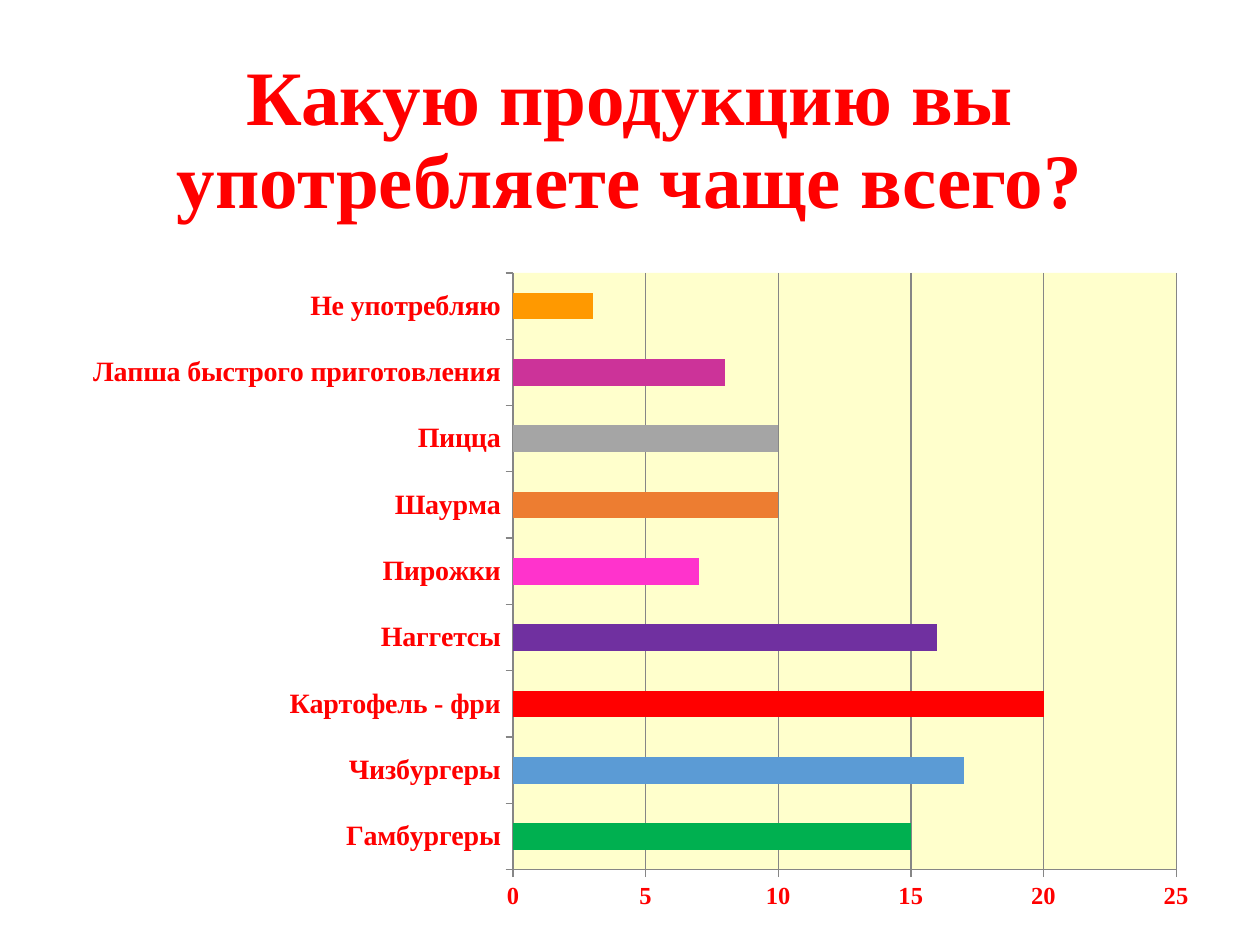
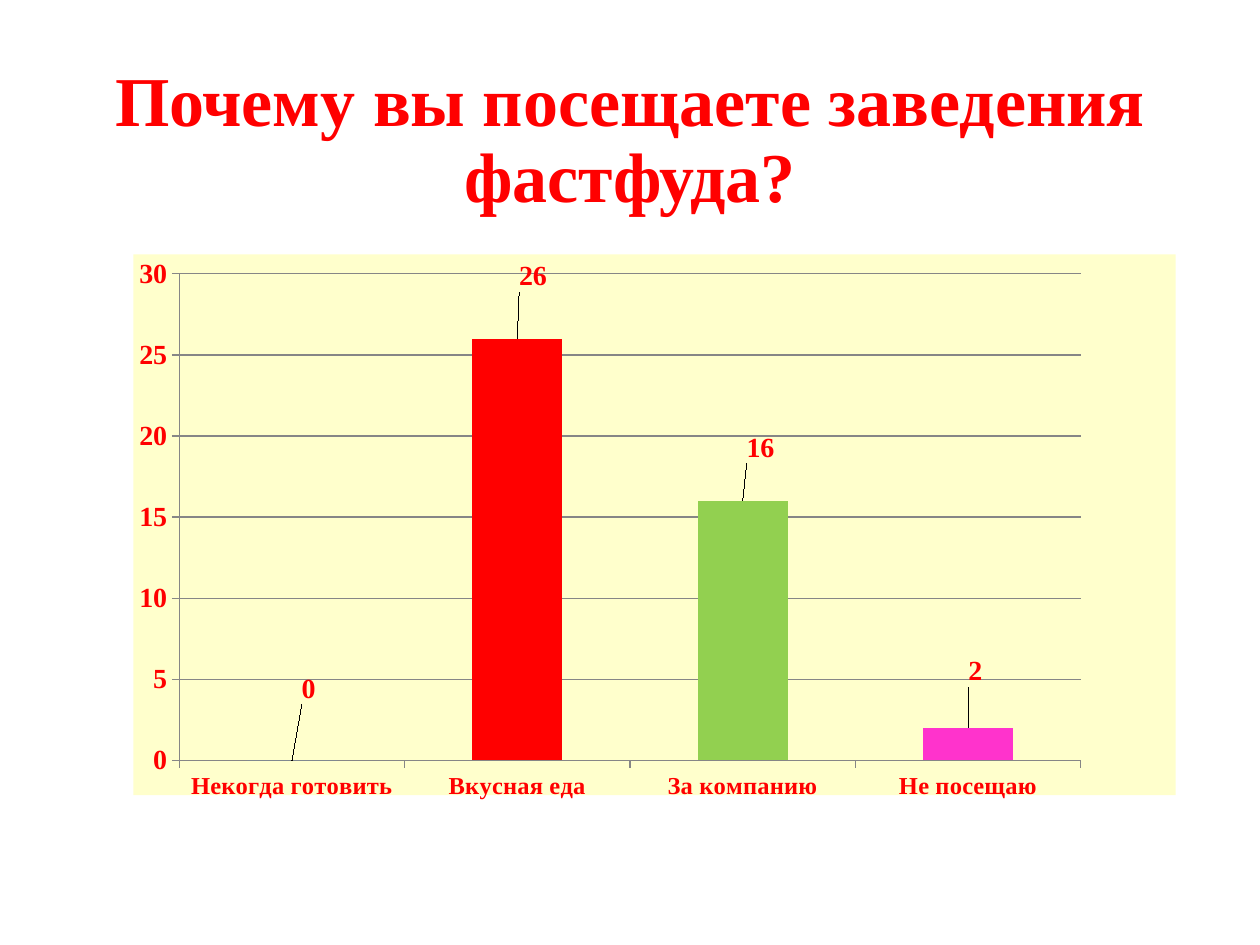
from lxml import etree
from pptx import Presentation
from pptx import util as u
from pptx.chart import data
from pptx.dml import color
from pptx.enum import chart as ch
from pptx.enum import text
from pptx.oxml import ns

FACE = "Times New Roman"
HUES = {
    "red": "FF0000", "cream": "FFFFCC", "grid": "868686", "blue": "5B9BD5",
    "green": "00B050", "violet": "7030A0", "pink": "FF33CC", "orange": "ED7D31",
    "gray": "A5A5A5", "plum": "CC3399", "amber": "FF9900", "lime": "92D050",
}
GOODS = [
    ("Гамбургеры", 15, "green"), ("Чизбургеры", 17, "blue"),
    ("Картофель - фри", 20, "red"), ("Наггетсы", 16, "violet"),
    ("Пирожки", 7, "pink"), ("Шаурма", 10, "orange"), ("Пицца", 10, "gray"),
    ("Лапша быстрого приготовления", 8, "plum"), ("Не употребляю", 3, "amber"),
]
MOTIVES = [
    ("Некогда готовить", 0, "blue"), ("Вкусная еда", 26, "red"),
    ("За компанию", 16, "lime"), ("Не посещаю", 2, "pink"),
]
SHIFTS = [(1.6, -9.4), (1.5, -7.7), (1.7, -6), (0.7, -6.6)]


def tint(name):
    """Return the named colour."""
    return color.RGBColor.from_string(HUES[name])


def style(font, size):
    """Give a font the shared bold red look."""
    font.name, font.size, font.bold = FACE, u.Pt(size), True
    font.color.rgb = tint("red")


def head(slide, words, size):
    """Place and format the slide title."""
    title = slide.shapes.title
    title.left, title.top = u.Cm(1.75), u.Cm(1.02)
    title.width, title.height = u.Cm(21.9), u.Cm(3.68)
    frame = title.text_frame
    frame.text = words
    frame.word_wrap = True
    frame.auto_size = text.MSO_AUTO_SIZE.NONE
    frame.vertical_anchor = text.MSO_ANCHOR.MIDDLE
    para = frame.paragraphs[0]
    para.alignment, para.line_spacing = text.PP_ALIGN.CENTER, 0.9
    style(para.runs[0].font, size)


def layout(values, inner=False):
    """Build a manual chart layout from percentages."""
    node = etree.Element(ns.qn("c:layout"))
    manual = etree.SubElement(node, ns.qn("c:manualLayout"))
    tags = []
    if inner:
        tags = [("layoutTarget", "inner"), ("xMode", "edge"), ("yMode", "edge")]
    tags += [(tag, str(value / 100)) for tag, value in zip("xywh", values)]
    for tag, value in tags:
        etree.SubElement(manual, ns.qn("c:" + tag)).set("val", value)
    return node


def paint(hue):
    """Build a borderless area format, filled when a hue is given."""
    node = etree.Element(ns.qn("c:spPr"))
    if hue:
        fill = etree.SubElement(node, ns.qn("a:solidFill"))
        etree.SubElement(fill, ns.qn("a:srgbClr")).set("val", HUES[hue])
    else:
        etree.SubElement(node, ns.qn("a:noFill"))
    line = etree.SubElement(node, ns.qn("a:ln"))
    etree.SubElement(line, ns.qn("a:noFill"))
    return node


def rule(line):
    """Format an axis or grid line."""
    line.color.rgb, line.width = tint("grid"), u.Pt(0.75)


def axis(part, size):
    """Format an axis and its labels."""
    part.major_tick_mark = ch.XL_TICK_MARK.OUTSIDE
    part.minor_tick_mark = ch.XL_TICK_MARK.NONE
    style(part.tick_labels.font, size)
    rule(part.format.line)


def graph(slide, kind, rows, box, area, top, sizes, back=None, fill=None):
    """Add a one-series chart in the given box."""
    table = data.CategoryChartData()
    table.categories = [row[0] for row in rows]
    table.add_series("Series 1", [row[1] for row in rows])
    chart = slide.shapes.add_chart(kind, *map(u.Cm, box), table).chart
    chart.has_title = chart.has_legend = False
    chart.font.name, chart.font.size = "Calibri", u.Pt(10)
    plot = chart.plots[0]
    plot.gap_width, plot.vary_by_categories = 150, False
    axis(chart.category_axis, sizes[0])
    scale = chart.value_axis
    axis(scale, sizes[1])
    scale.minimum_scale, scale.maximum_scale, scale.major_unit = 0, top, 5
    scale.has_major_gridlines = True
    rule(scale.major_gridlines.format.line)
    series = plot.series[0]
    series.format.fill.solid()
    series.format.fill.fore_color.rgb = tint("blue")
    for spot, row in enumerate(rows):
        shade = series.points[spot].format.fill
        shade.solid()
        shade.fore_color.rgb = tint(row[2])
    body = chart.element.find(ns.qn("c:chart"))
    body.addnext(paint(back))
    zone = body.find(ns.qn("c:plotArea"))
    for old in zone.findall(ns.qn("c:layout")):
        zone.remove(old)
    zone.insert(0, layout(area, inner=True))
    zone.append(paint(fill))
    return chart


def mark(chart, shifts, size):
    """Show the values, each moved from its bar end."""
    series = chart.plots[0].series[0]
    labels = series.data_labels
    labels.show_value = True
    style(labels.font, size)
    for spot, shift in enumerate(shifts):
        label = series.points[spot].data_label
        style(label.font, size)
        label.position = ch.XL_LABEL_POSITION.OUTSIDE_END
    for node, shift in zip(series.data_labels._element.findall(ns.qn("c:dLbl")), shifts):
        node.find(ns.qn("c:idx")).addnext(layout(shift))


def goods(slide):
    """Build the slide on the products eaten most."""
    head(slide, "Какую продукцию вы употребляете чаще всего?", 44)
    graph(slide, ch.XL_CHART_TYPE.BAR_CLUSTERED, GOODS, (1.3, 5.08, 23.01, 13.26),
          (39.3, 3.2, 58.1, 90.9), 25, (16, 14), fill="cream")


def motives(slide):
    """Build the slide on the reasons for visits."""
    head(slide, "Почему вы посещаете заведения фастфуда?", 40)
    chart = graph(slide, ch.XL_CHART_TYPE.COLUMN_CLUSTERED, MOTIVES,
                  (2.69, 5.13, 21.01, 11), (4.4, 3.6, 86.5, 90), 30, (14, 16),
                  back="cream")
    mark(chart, SHIFTS, 16)


def main():
    """Build and save the deck."""
    deck = Presentation()
    deck.slide_width, deck.slide_height = u.Cm(25.4), u.Cm(19.05)
    for build in (goods, motives):
        build(deck.slides.add_slide(deck.slide_layouts[5]))
    deck.save("out.pptx")


if __name__ == "__main__":
    main()
